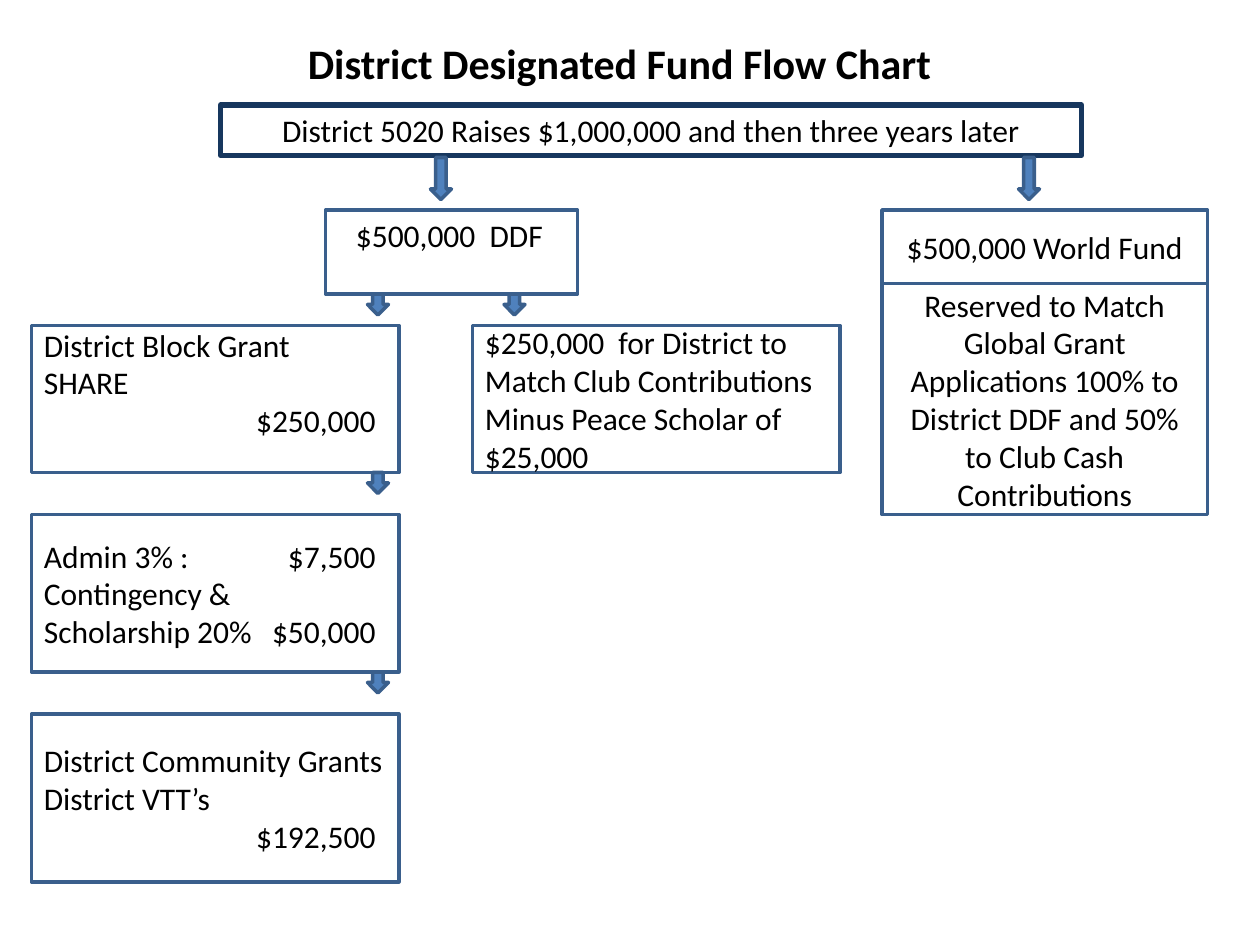
from dataclasses import dataclass

from lxml import etree
from pptx import Presentation
from pptx.dml.color import RGBColor
from pptx.enum.shapes import MSO_SHAPE
from pptx.enum.text import MSO_ANCHOR, MSO_AUTO_SIZE, PP_ALIGN
from pptx.oxml.ns import qn
from pptx.util import Pt

RECT, ARROW = MSO_SHAPE.RECTANGLE, MSO_SHAPE.DOWN_ARROW
LEFT, MID = PP_ALIGN.LEFT, PP_ALIGN.CENTER
TOP, CENTER = MSO_ANCHOR.TOP, MSO_ANCHOR.MIDDLE
PX = 7620  # 120 px to the inch
TAB = 316  # right edge of the amounts, from the text's left edge


@dataclass(frozen=True)
class Theme:
    font: str = "Calibri"
    ink: str = "000000"
    paper: str = "FFFFFF"
    edge: str = "3A5F8C"
    navy: str = "17375E"
    blue: str = "4F81BD"
    head: int = 24
    body: int = 18
    thin: int = 2
    thick: int = 3


THEME = Theme()
TITLE = "District Designated Fund Flow Chart"
TITLE_AT = (210, 20, 760, 80)

# place, lines, alignment, format values that differ from the usual
BOXES = [
    ((210, 100, 820, 48),
     ["District 5020 Raises $1,000,000 and then three years later"], MID,
     {"vertical_anchor": TOP}),
    ((310, 200, 240, 80), ["$500,000  DDF"], LEFT,
     {"vertical_anchor": TOP, "margin_left": 29 * PX}),
    ((840, 200, 310, 70), ["$500,000 World Fund"], MID, {}),
    ((30, 310, 350, 140),
     ["District Block Grant", "SHARE", "\t$250,000"], LEFT,
     {"vertical_anchor": TOP, "margin_top": 0}),
    ((450, 310, 350, 140),
     ["$250,000  for District to", "Match Club Contributions",
      "Minus Peace Scholar of", "$25,000"], LEFT, {}),
    ((840, 270, 310, 220),
     ["Reserved to Match Global Grant Applications 100% to "
      "District DDF and 50% to Club Cash Contributions"], MID, {}),
    ((30, 490, 350, 150),
     ["Admin 3% :\t$7,500", "Contingency &", "Scholarship 20%\t$50,000"],
     LEFT, {}),
    ((30, 680, 350, 160),
     ["District Community Grants", "District VTT’s", "\t$192,500"], LEFT, {}),
]

# left, top, height
ARROWS = [(350, 280, 20), (480, 280, 20), (350, 450, 20), (350, 640, 20),
          (410, 150, 40), (970, 150, 40)]


def apply(obj, values):
    for name, value in values.items():
        setattr(obj, name, value)


def emu(place):
    return [n * PX for n in place]


def color(code):
    return RGBColor.from_string(code)


def add_tab(para):
    """Give the paragraph a right tab stop for its amount."""
    stops = etree.SubElement(para._p.get_or_add_pPr(), qn("a:tabLst"))
    etree.SubElement(stops, qn("a:tab"), pos=str(TAB * PX), algn="r")


def write(frame, lines, align, size, bold=False, **extra):
    apply(frame, {"word_wrap": True, "auto_size": MSO_AUTO_SIZE.NONE,
                  "vertical_anchor": CENTER, **extra})
    for i, line in enumerate(lines):
        para = frame.add_paragraph() if i else frame.paragraphs[0]
        para.alignment = align
        if "\t" in line:
            add_tab(para)
        run = para.add_run()
        run.text = line
        apply(run.font, {"name": THEME.font, "size": Pt(size), "bold": bold})
        run.font.color.rgb = color(THEME.ink)


def add_form(slide, kind, place, fill, edge=THEME.edge, width=THEME.thin):
    form = slide.shapes.add_shape(kind, *emu(place))
    form.shadow.inherit = False
    form.fill.solid()
    form.fill.fore_color.rgb = color(fill)
    form.line.color.rgb = color(edge)
    form.line.width = Pt(width)
    return form


def main():
    deck = Presentation()
    apply(deck, {"slide_width": 1200 * PX, "slide_height": 900 * PX})
    slide = deck.slides.add_slide(deck.slide_layouts[5])

    title = slide.shapes.title
    apply(title, dict(zip(("left", "top", "width", "height"), emu(TITLE_AT))))
    write(title.text_frame, [TITLE], MID, THEME.head, bold=True)

    for i, (place, lines, align, extra) in enumerate(BOXES):
        box = add_form(slide, RECT, place, THEME.paper)
        if i == 0:
            box.fill.background()
            box.line.color.rgb = color(THEME.navy)
            box.line.width = Pt(THEME.thick)
        write(box.text_frame, lines, align, THEME.body, **extra)

    for left, top, height in ARROWS:
        add_form(slide, ARROW, (left, top, 20, height), THEME.blue)

    deck.save("out.pptx")


if __name__ == "__main__":
    main()
